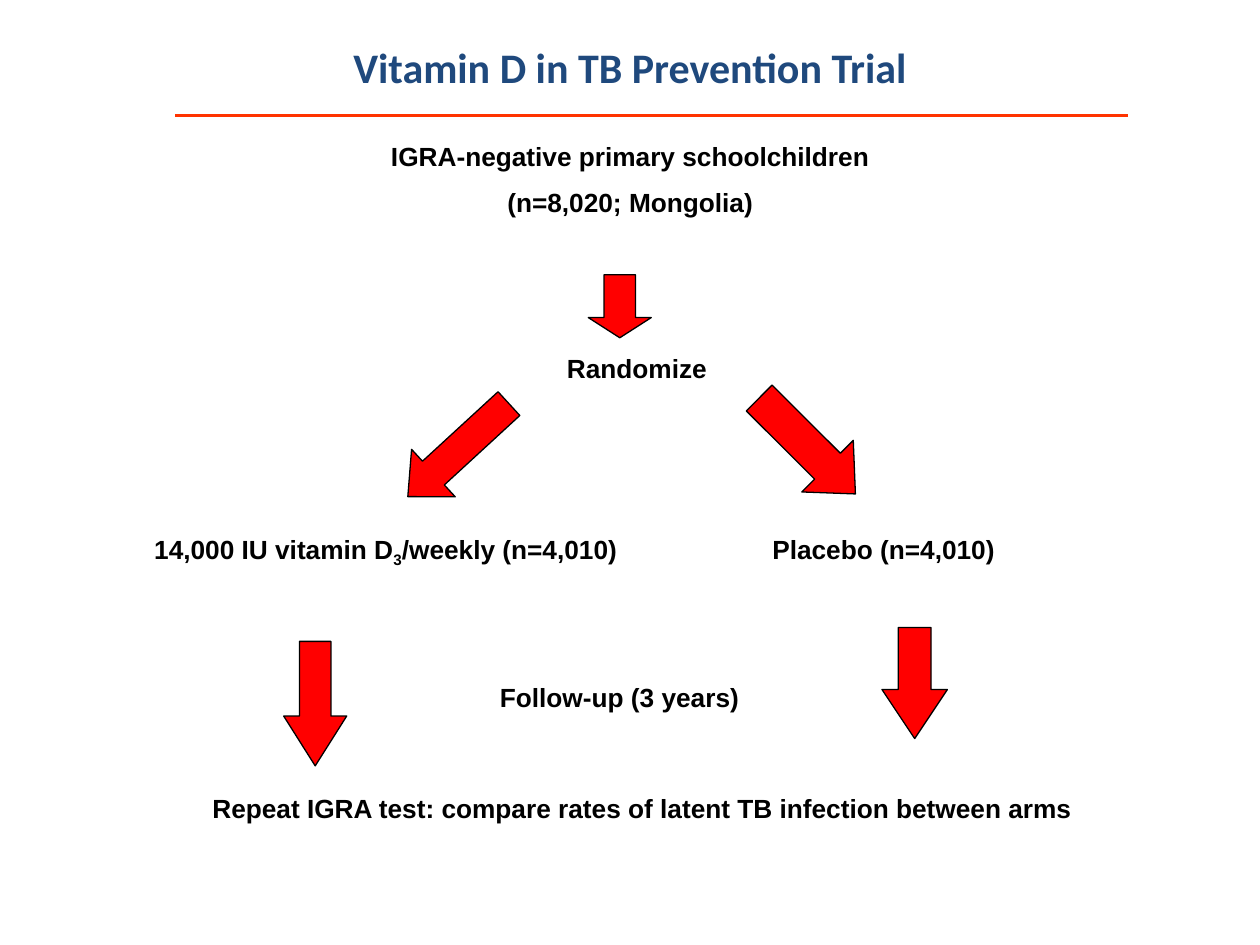
from lxml.etree import SubElement
from pptx import Presentation
from pptx.dml.color import RGBColor
from pptx.enum.shapes import MSO_CONNECTOR as Connector, MSO_SHAPE as Shape
from pptx.enum.text import MSO_ANCHOR as Anchor, MSO_AUTO_SIZE as AutoSize, PP_ALIGN as Align
from pptx.oxml.ns import qn
from pptx.util import Cm, Pt


def color(value):
    return RGBColor.from_string(value)


class TrialSlide:
    """Style and current slide of the trial flow diagram."""

    body_font, body_size, body_color = "Arial", 15, "000000"
    title_font, title_size, title_color = "Calibri", 24, "1F497D"
    arrow_fill, arrow_line, rule_color = "FF0000", "000000", "FF3300"
    paragraph_gap = Pt(8.2)

    def __init__(self, presentation):
        self.slide = presentation.slides.add_slide(presentation.slide_layouts[5])

    def add_run(self, paragraph, text, font, size, hex_color, baseline=0):
        run = paragraph.add_run()
        run.text = text
        run.font.name, run.font.size, run.font.bold = font, Pt(size), True
        run.font.color.rgb = color(hex_color)
        if baseline:
            run._r.get_or_add_rPr().set("baseline", str(baseline * 1000))

    def title(self, text, left, top, width, height):
        shape = self.slide.shapes.title
        shape.left, shape.top = Cm(left), Cm(top)
        shape.width, shape.height = Cm(width), Cm(height)
        frame = shape.text_frame
        frame.vertical_anchor = Anchor.TOP
        frame.auto_size = AutoSize.NONE
        paragraph = frame.paragraphs[0]
        paragraph.alignment = Align.CENTER
        self.add_run(paragraph, text, self.title_font, self.title_size, self.title_color)

    def label(self, paragraphs, left, top, width, height=0.89, align=Align.CENTER):
        shape = self.slide.shapes.add_textbox(Cm(left), Cm(top), Cm(width), Cm(height))
        frame = shape.text_frame
        frame.word_wrap = True
        for index, runs in enumerate(paragraphs):
            paragraph = frame.add_paragraph() if index else frame.paragraphs[0]
            paragraph.alignment = align
            if index:
                paragraph.space_before = self.paragraph_gap
            for text, baseline in runs:
                self.add_run(paragraph, text, self.body_font, self.body_size,
                             self.body_color, baseline)

    def arrow(self, left, top, width, height, head, rotation=0):
        shape = self.slide.shapes.add_shape(
            Shape.DOWN_ARROW, Cm(left), Cm(top), Cm(width), Cm(height))
        shape.adjustments[0], shape.adjustments[1] = 0.5, head
        shape.rotation = rotation
        shape.shadow.inherit = False
        shape.fill.solid()
        shape.fill.fore_color.rgb = color(self.arrow_fill)
        shape.line.color.rgb = color(self.arrow_line)
        shape.line.width = Pt(0.75)

    def rule(self, left, right, top):
        connector = self.slide.shapes.add_connector(
            Connector.STRAIGHT, Cm(left), Cm(top), Cm(right), Cm(top))
        connector.line.color.rgb = color(self.rule_color)
        connector.line.width = Pt(2)
        SubElement(connector._element.spPr, qn("a:effectLst"))


def main():
    presentation = Presentation()
    presentation.slide_width, presentation.slide_height = Cm(25.4), Cm(19.05)
    trial = TrialSlide(presentation)

    trial.title("Vitamin D in TB Prevention Trial", 0, 0.71, 25.4, 3.18)
    trial.rule(3.53, 22.73, 2.33)

    trial.label([[("IGRA-negative primary schoolchildren", 0)],
                 [("(n=8,020; Mongolia)", 0)]], 1.54, 2.7, 22.33, 1.83)
    trial.arrow(11.86, 5.54, 1.27, 1.27, 0.32)
    trial.label([[("Randomize", 0)]], 8.71, 6.97, 8.26, 1.91)

    trial.arrow(8.59, 7.69, 1.3, 2.77, 0.54, 47.4)
    trial.arrow(15.54, 7.62, 1.47, 2.74, 0.54, 314.9)
    trial.label([[("14,000 IU vitamin D", 0), ("3", -25), ("/weekly (n=4,010)", 0)]],
                0.23, 10.62, 15.09)
    trial.label([[("Placebo (n=4,010)", 0)]], 15.32, 10.62, 9.42, align=Align.LEFT)

    trial.arrow(5.72, 12.93, 1.27, 2.51, 0.79)
    trial.arrow(17.78, 12.65, 1.32, 2.24, 0.75)
    trial.label([[("Follow-up (3 years)", 0)]], 3.18, 13.61, 18.62)
    trial.label([[("Repeat IGRA test: compare rates of latent TB infection between arms", 0)]],
                0.69, 15.85, 24.51)

    presentation.save("out.pptx")


if __name__ == "__main__":
    main()
